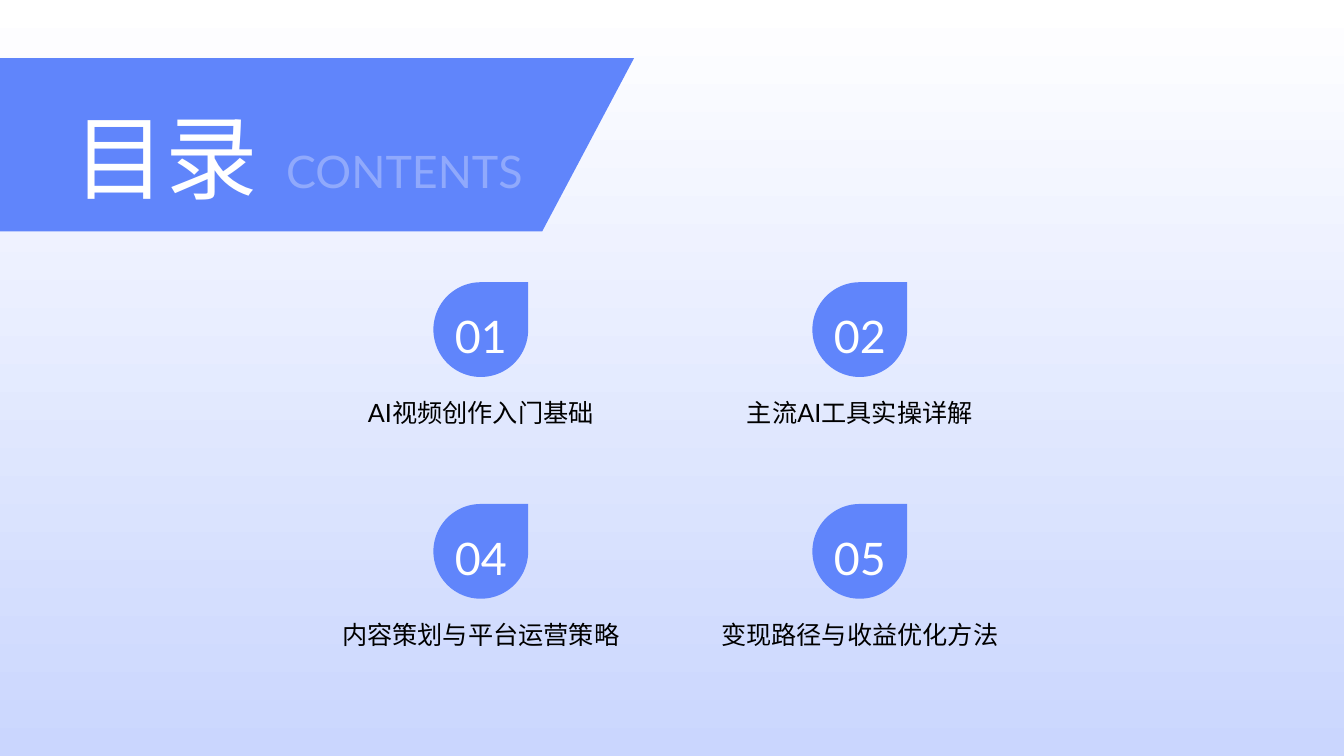
import lxml.etree
import pptx
import pptx.dml.color
import pptx.enum.shapes
import pptx.enum.text
import pptx.oxml.ns
import pptx.util

TITLE = "目录"
SUBTITLE = "CONTENTS"
CHAPTERS = [
    ("01", "AI视频创作入门基础"),
    ("02", "主流AI工具实操详解"),
    ("04", "内容策划与平台运营策略"),
    ("05", "变现路径与收益优化方法"),
]

THEME = {
    "font": "Lato",
    "blue": "6085FB",
    "white": "FFFFFF",
    "pale": "CAD6FE",
    "black": "000000",
    "title_size": 66,
    "number_size": 32,
    "label_size": 18,
    "line_spacing": 1.1,
}

PAGE_WIDTH, PAGE_HEIGHT = 960, 540
COLUMNS = 2
GRID_LEFT, GRID_TOP = 309.6, 201.6
COLUMN_STEP, ROW_STEP = 270.7, 158.4
DROP = 67.7
NUMBER_WIDTH, NUMBER_HEIGHT, NUMBER_DROP = 62.6, 37.4, 15.1
LABEL_WIDTH, LABEL_HEIGHT, LABEL_DROP = 231.8, 67.7, 79.9

SHAPES = pptx.enum.shapes.MSO_SHAPE
ALIGN = pptx.enum.text.PP_ALIGN


def colour(name):
    return pptx.dml.color.RGBColor.from_string(THEME[name])


def points(*lengths):
    return [pptx.util.Pt(length) for length in lengths]


def add_block(page, kind, frame, fill=None):
    block = page.shapes.add_shape(kind, *points(*frame))
    block.shadow.inherit = False
    block.line.fill.background()
    if fill:
        block.fill.solid()
        block.fill.fore_color.rgb = colour(fill)
    return block


def add_text(page, text, frame, size, ink, align=ALIGN.LEFT, inset=(0, 0)):
    box = page.shapes.add_textbox(*points(*frame))
    body = box.text_frame
    body.word_wrap = True
    body.margin_left = body.margin_right = pptx.util.Pt(inset[0])
    body.margin_top = body.margin_bottom = pptx.util.Pt(inset[1])
    para = body.paragraphs[0]
    para.text = text
    para.alignment = align
    para.line_spacing = THEME["line_spacing"]
    para.font.name = THEME["font"]
    para.font.size = pptx.util.Pt(THEME[size])
    para.font.color.rgb = colour(ink)
    return para


def add_backdrop(page):
    backdrop = add_block(page, SHAPES.RECTANGLE, (0, 0, PAGE_WIDTH, PAGE_HEIGHT))
    backdrop.fill.gradient()
    backdrop.fill.gradient_angle = 270
    for stop, name, position in zip(backdrop.fill.gradient_stops, ("white", "pale"), (0, 1)):
        stop.color.rgb = colour(name)
        stop.position = position


def add_banner(page):
    banner = add_block(page, SHAPES.PARALLELOGRAM, (-83.5, 41.5, 536.4, 123.8), "blue")
    banner.adjustments[0] = 0.53
    inset = (7.2, 3.6)
    subtitle = add_text(page, SUBTITLE, (197.3, 95, 226.1, 46.1), "number_size", "white", inset=inset)
    tint = subtitle.font.fill._xPr.find(".//" + pptx.oxml.ns.qn("a:srgbClr"))
    lxml.etree.SubElement(tint, pptx.oxml.ns.qn("a:alpha"), val="30000")
    add_text(page, TITLE, (45.4, 59.8, 226.1, 87.1), "title_size", "white", inset=inset)


def add_chapter(page, index, number, label):
    row, column = divmod(index, COLUMNS)
    left = GRID_LEFT + column * COLUMN_STEP
    top = GRID_TOP + row * ROW_STEP
    centre = left + DROP / 2
    add_block(page, SHAPES.TEAR, (left, top, DROP, DROP), "blue")
    add_text(page, number, (centre - NUMBER_WIDTH / 2, top + NUMBER_DROP, NUMBER_WIDTH, NUMBER_HEIGHT),
             "number_size", "white", ALIGN.CENTER)
    add_text(page, label, (centre - LABEL_WIDTH / 2, top + LABEL_DROP, LABEL_WIDTH, LABEL_HEIGHT),
             "label_size", "black", ALIGN.CENTER)


def main():
    deck = pptx.Presentation()
    deck.slide_width, deck.slide_height = points(PAGE_WIDTH, PAGE_HEIGHT)
    page = deck.slides.add_slide(deck.slide_layouts[6])
    add_backdrop(page)
    add_banner(page)
    for index, (number, label) in enumerate(CHAPTERS):
        add_chapter(page, index, number, label)
    deck.save("out.pptx")


if __name__ == "__main__":
    main()
